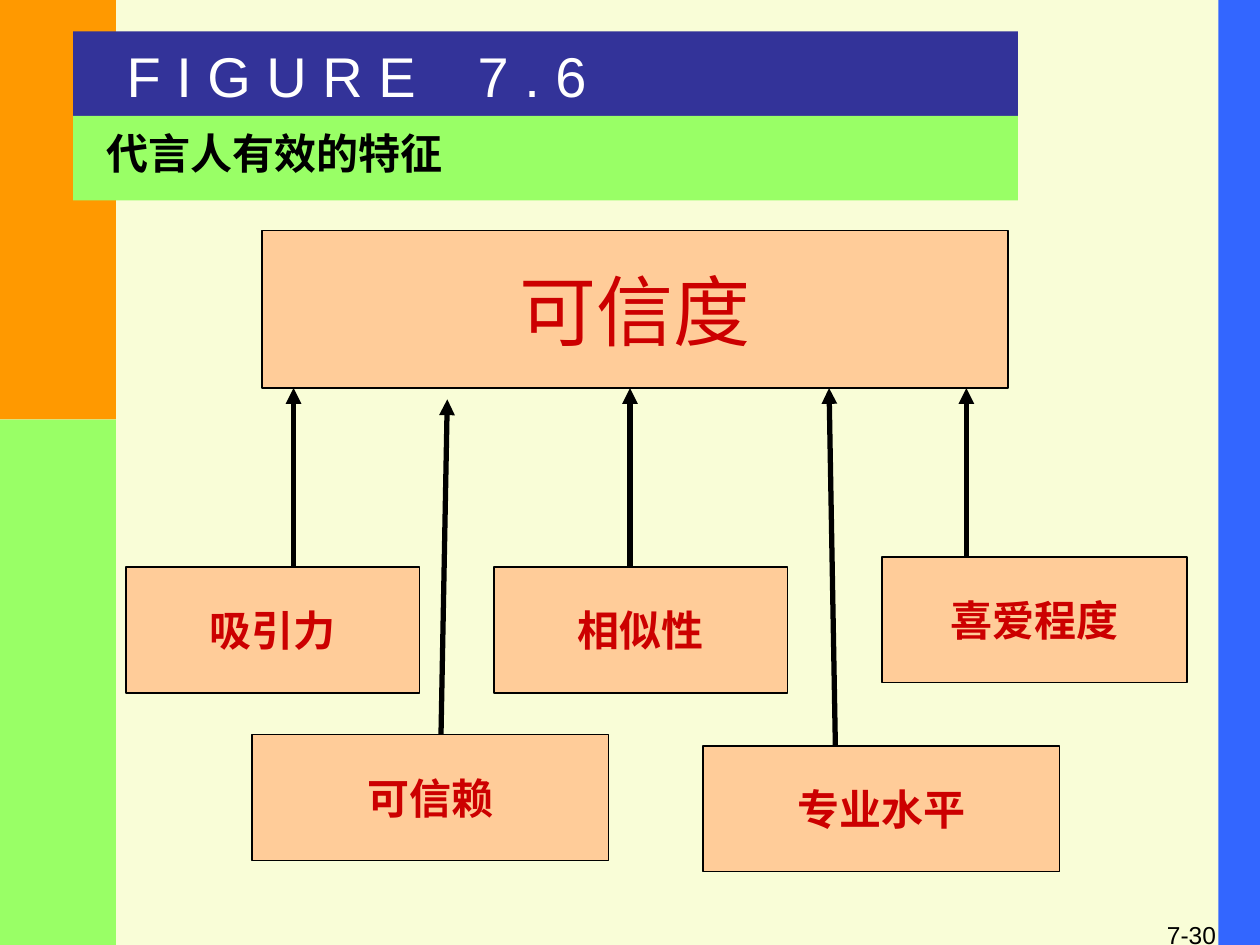
from dataclasses import dataclass

from lxml import etree
from pptx import Presentation
from pptx.dml.color import RGBColor
from pptx.enum.shapes import MSO_CONNECTOR, MSO_SHAPE
from pptx.enum.text import MSO_ANCHOR, PP_ALIGN
from pptx.oxml.ns import qn
from pptx.shapes.autoshape import Shape
from pptx.slide import Slide
from pptx.util import Inches, Pt

RECTANGLE = MSO_SHAPE.RECTANGLE
STRAIGHT = MSO_CONNECTOR.STRAIGHT
TOP, MIDDLE = MSO_ANCHOR.TOP, MSO_ANCHOR.MIDDLE
LEFT, CENTER, RIGHT = PP_ALIGN.LEFT, PP_ALIGN.CENTER, PP_ALIGN.RIGHT


@dataclass(frozen=True)
class Theme:
    font: str = "Arial"
    background: str = "F9FDD7"
    blue: str = "3366FF"
    orange: str = "FF9900"
    green: str = "99FF66"
    navy: str = "333399"
    peach: str = "FFCC99"
    red: str = "CC0000"
    black: str = "000000"
    white: str = "FFFFFF"
    number_size: int = 14
    body_size: int = 24
    title_size: int = 32
    goal_size: int = 44
    outline: float = 0.75
    arrow: float = 3


THEME = Theme()


@dataclass(frozen=True)
class Area:
    left: float
    top: float
    width: float
    height: float


@dataclass(frozen=True)
class Band:
    area: Area
    color: str


@dataclass(frozen=True)
class Label:
    text: str
    area: Area
    size: int
    color: str
    bold: bool = False
    align: PP_ALIGN = CENTER
    anchor: MSO_ANCHOR = MIDDLE
    wrap: bool = False


@dataclass(frozen=True)
class Trait:
    text: str
    area: Area
    arrow_start: float
    arrow_end: float
    arrow_gap: float = 0


BANDS = (
    Band(Area(9.67, 0, 0.33, 7.5), THEME.blue),
    Band(Area(0, 0, 0.92, 3.33), THEME.orange),
    Band(Area(0, 3.33, 0.92, 4.17), THEME.green),
    Band(Area(0.58, 0.25, 7.5, 0.67), THEME.navy),
    Band(Area(0.58, 0.92, 7.5, 0.67), THEME.green),
)
LABELS = (
    Label("7-30", Area(7.67, 7.17, 2.08, 0.5), THEME.number_size, THEME.black, align=RIGHT),
    Label("F I G U R E    7 . 6", Area(0.75, 0.28, 4.17, 0.63), THEME.title_size,
          THEME.white, anchor=TOP, wrap=True),
    Label("代言人有效的特征", Area(0.75, 0.92, 7.58, 0.58), THEME.body_size,
          THEME.black, bold=True, align=LEFT, wrap=True),
)
GOAL = Label("可信度", Area(2.08, 1.83, 5.92, 1.25), THEME.goal_size, THEME.red)
TRAITS = (
    Trait("吸引力", Area(1, 4.5, 2.33, 1), 2.33, 2.33),
    Trait("喜爱程度", Area(7, 4.42, 2.42, 1), 7.67, 7.67),
    Trait("可信赖", Area(2, 5.83, 2.83, 1), 3.5, 3.55, 0.09),
    Trait("专业水平", Area(5.58, 5.92, 2.83, 1), 6.63, 6.58),
    Trait("相似性", Area(3.92, 4.5, 2.33, 1), 5, 5),
)


def rgb(color: str) -> RGBColor:
    return RGBColor.from_string(color)


def place(area: Area) -> tuple:
    return Inches(area.left), Inches(area.top), Inches(area.width), Inches(area.height)


def write_label(shape: Shape, label: Label) -> None:
    text_frame = shape.text_frame
    text_frame.text = label.text
    text_frame.word_wrap = label.wrap
    text_frame.vertical_anchor = label.anchor
    paragraph = text_frame.paragraphs[0]
    paragraph.alignment = label.align
    font = paragraph.runs[0].font
    font.name = THEME.font
    font.size = Pt(label.size)
    font.bold = label.bold
    font.color.rgb = rgb(label.color)


def draw_band(slide: Slide, band: Band) -> Shape:
    shape = slide.shapes.add_shape(RECTANGLE, *place(band.area))
    shape.shadow.inherit = False
    shape.fill.solid()
    shape.fill.fore_color.rgb = rgb(band.color)
    shape.line.fill.background()
    return shape


def draw_box(slide: Slide, label: Label) -> None:
    shape = draw_band(slide, Band(label.area, THEME.peach))
    shape.line.color.rgb = rgb(THEME.black)
    shape.line.width = Pt(THEME.outline)
    write_label(shape, label)


def draw_arrow(slide: Slide, trait: Trait) -> None:
    goal_bottom = GOAL.area.top + GOAL.area.height
    connector = slide.shapes.add_connector(
        STRAIGHT, Inches(trait.arrow_start), Inches(trait.area.top),
        Inches(trait.arrow_end), Inches(goal_bottom + trait.arrow_gap))
    connector.line.color.rgb = rgb(THEME.black)
    connector.line.width = Pt(THEME.arrow)
    properties = connector._element.spPr
    etree.SubElement(properties.find(qn("a:ln")), qn("a:tailEnd"), type="triangle")
    etree.SubElement(properties, qn("a:effectLst"))


def main() -> None:
    presentation = Presentation()
    presentation.slide_width = Inches(10)
    presentation.slide_height = Inches(7.5)
    slide = presentation.slides.add_slide(presentation.slide_layouts[6])
    slide.background.fill.solid()
    slide.background.fill.fore_color.rgb = rgb(THEME.background)
    for band in BANDS:
        draw_band(slide, band)
    for label in LABELS:
        write_label(slide.shapes.add_textbox(*place(label.area)), label)
    draw_box(slide, GOAL)
    for trait in TRAITS:
        draw_box(slide, Label(trait.text, trait.area, THEME.body_size, THEME.red, bold=True))
        draw_arrow(slide, trait)
    presentation.save("out.pptx")


if __name__ == "__main__":
    main()
